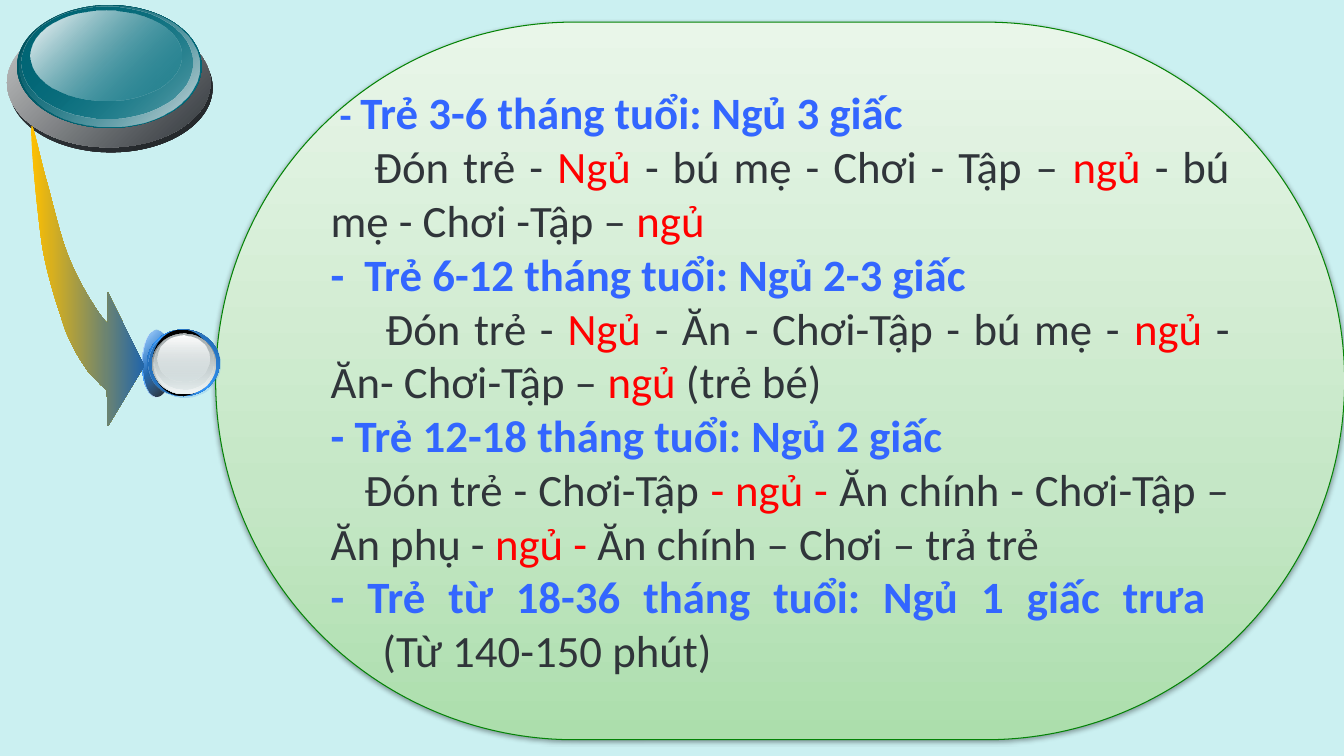
from dataclasses import dataclass, field
from typing import NamedTuple

import lxml.etree
import pptx
import pptx.dml.color
import pptx.enum.shapes
import pptx.enum.text
import pptx.oxml.ns
import pptx.util

Pt = pptx.util.Pt
MSO_SHAPE = pptx.enum.shapes.MSO_SHAPE
qn = pptx.oxml.ns.qn


@dataclass(frozen=True)
class Theme:
    background: str = "CBF0F1"
    border: str = "048306"
    heading: str = "3366FF"
    sleep: str = "FF0000"
    body: str = "30353A"
    font: str = "Calibri"
    size: float = 32
    small: float = 28
    leading: float = 38.4


class Stop(NamedTuple):
    pos: float
    color: str
    opacity: float = 100


class Box(NamedTuple):
    x: float
    y: float
    w: float
    h: float


class Disc(NamedTuple):
    box: Box
    angle: float
    stops: list[Stop]


class Run(NamedTuple):
    text: str
    color: str
    bold: bool = False
    size: float = 32


@dataclass(frozen=True)
class Para:
    runs: list[Run]
    indent: float = 0
    margin: float = 0


@dataclass
class Outline:
    points: list[tuple[float, float]] = field(default_factory=list)

    def line(self, *points: tuple[float, float]) -> None:
        self.points.extend(points)

    def curve(self, b: tuple, c: tuple, d: tuple, steps: int = 12) -> None:
        a = self.points[-1]
        for i in range(1, steps + 1):
            t = i / steps
            u = 1 - t
            weights = (u**3, 3 * u * u * t, 3 * u * t * t, t**3)
            self.points.append(tuple(
                sum(k * q[axis] for k, q in zip(weights, (a, b, c, d))) for axis in (0, 1)))


TH = Theme()

BUTTON = [
    Disc(Box(6.5, 16.6, 145.4, 92.2), 45, [Stop(0, "30353A"), Stop(100, "23272A")]),
    Disc(Box(5, 13, 145.4, 92.2), 45, [Stop(0, "C7C8C8"), Stop(100, "30353A")]),
    Disc(Box(12.2, 3.6, 131.8, 87.8), 45, [Stop(0, "01515D"), Stop(100, "027182")]),
    Disc(Box(13.7, 4.3, 128.9, 85.7), 45, [Stop(0, "027182", 0), Stop(100, "D4DBDE")]),
    Disc(Box(15.1, 5, 122.4, 79.9), 45, [Stop(0, "026675"), Stop(100, "027182", 48)]),
    Disc(Box(21.6, 7.2, 108, 64.8), 45, [Stop(0, "FFFFFF"), Stop(100, "027182", 38)]),
]
KNOB = [
    Disc(Box(101.5, 236.2, 20.2, 47.5), 45,
         [Stop(0, "FFFFFF"), Stop(50, "3399FF"), Stop(100, "FFFFFF")]),
    Disc(Box(101.5, 235.4, 20.2, 47.5), 45, [Stop(0, "3399FF", 32), Stop(100, "000000", 90)]),
    Disc(Box(105.1, 235.4, 51.8, 47.5), 315,
         [Stop(0, "1C538A"), Stop(50, "3399FF"), Stop(100, "1C538A")]),
    Disc(Box(105.8, 236.2, 51.8, 47.5), 45, [Stop(0, "2061A2"), Stop(100, "3399FF", 0)]),
    Disc(Box(108.7, 235.4, 42.5, 47.5), 0, [Stop(0, "000000"), Stop(100, "000000")]),
    Disc(Box(108.7, 238.3, 45.4, 43.2), 90, [Stop(0, "636869"), Stop(100, "D6E1E2")]),
    Disc(Box(109.4, 238.3, 44.6, 42.5), 90, [Stop(0, "D6E1E2", 0), Stop(100, "F1F5F5")]),
    Disc(Box(110.2, 238.3, 42.5, 39.6), 90, [Stop(0, "AAB2B3"), Stop(100, "D6E1E2", 48)]),
    Disc(Box(112.3, 239.8, 37.4, 32.4), 90, [Stop(0, "FFFFFF"), Stop(100, "D6E1E2", 38)]),
]
PILL = Disc(Box(154.1, 15.8, 806.4, 512.6), 270,
            [Stop(0, "ACDEAC"), Stop(35, "C5E7C6"), Stop(100, "E9F6E9")])


def head(text: str) -> Run:
    return Run(text, TH.heading, True)


def body(text: str) -> Run:
    return Run(text, TH.body)


def sleep(text: str) -> Run:
    return Run(text, TH.sleep)


SCHEDULE = [
    Para([Run("- ", TH.heading, True, TH.small), head("Trẻ 3-6 tháng tuổi: Ngủ 3 giấc")], 6.3),
    Para([body("Đón trẻ - "), sleep("Ngủ"), body(" - bú mẹ - Chơi - Tập – "), sleep("ngủ"),
          body(" - bú mẹ - Chơi -Tập – "), sleep("ngủ")], 31),
    Para([head("-\tTrẻ 6-12 tháng tuổi: Ngủ 2-3 giấc")], -24, 24),
    Para([body("Đón trẻ - "), sleep("Ngủ "), body("- Ăn - Chơi-Tập - bú mẹ - "), sleep("ngủ "),
          body("- Ăn- Chơi-Tập – "), sleep("ngủ "), body("(trẻ bé)")], 39),
    Para([head("- Trẻ 12-18 tháng tuổi: Ngủ 2 giấc")]),
    Para([body("Đón trẻ - Chơi-Tập "), sleep("- ngủ - "), body("Ăn chính - Chơi-Tập – Ăn phụ - "),
          sleep("ngủ - "), body("Ăn chính – Chơi – trả trẻ")], 24),
    Para([head("- Trẻ từ 18-36 tháng tuổi: Ngủ 1 giấc trưa "), body("\n"),
          body("(Từ 140-150 phút)")], -37, 37),
]


def rgb(color: str) -> pptx.dml.color.RGBColor:
    return pptx.dml.color.RGBColor.from_string(color)


def apply(target: object, values: dict) -> None:
    for name, value in values.items():
        setattr(target, name, value)


def add_color(parent, color: str, opacity: float) -> None:
    clr = lxml.etree.SubElement(parent, qn("a:srgbClr"), val=color)
    if opacity < 100:
        lxml.etree.SubElement(clr, qn("a:alpha"), val=str(round(opacity * 1000)))


def paint(sp, stops: list[Stop], angle: float) -> None:
    sp.shadow.inherit = False
    sp.line.fill.background()
    grad = lxml.etree.Element(qn("a:gradFill"), rotWithShape="1")
    gs_lst = lxml.etree.SubElement(grad, qn("a:gsLst"))
    for stop in stops:
        gs = lxml.etree.SubElement(gs_lst, qn("a:gs"), pos=str(round(stop.pos * 1000)))
        add_color(gs, stop.color, stop.opacity)
    lxml.etree.SubElement(grad, qn("a:lin"), ang=str(round(angle * 60000)), scaled="0")
    sp.element.spPr.insert(2, grad)


def add_disc(s, disc: Disc, kind=MSO_SHAPE.OVAL):
    sp = s.shapes.add_shape(kind, *(Pt(v) for v in disc.box))
    paint(sp, disc.stops, disc.angle)
    return sp


def add_para(p, para: Para) -> None:
    apply(p, {"alignment": pptx.enum.text.PP_ALIGN.JUSTIFY, "line_spacing": Pt(TH.leading)})
    p_pr = p._p.get_or_add_pPr()
    p_pr.set("marL", str(Pt(para.margin)))
    p_pr.set("indent", str(Pt(para.indent)))
    for run in para.runs:
        if run.text == "\n":
            p.add_line_break()
            continue
        r = p.add_run()
        apply(r, {"text": run.text})
        apply(r.font, {"name": TH.font, "size": Pt(run.size), "bold": run.bold})
        r.font.color.rgb = rgb(run.color)


def add_schedule(s) -> None:
    sp = add_disc(s, PILL, MSO_SHAPE.ROUNDED_RECTANGLE)
    sp.adjustments[0] = 0.5
    sp.line.color.rgb = rgb(TH.border)
    sp.line.width = Pt(0.75)
    shadow = lxml.etree.SubElement(
        sp.element.spPr.find(qn("a:effectLst")), qn("a:outerShdw"),
        blurRad=str(Pt(3.1)), dist=str(Pt(1.6)), dir="5400000", rotWithShape="0")
    add_color(shadow, "000000", 38)
    tf = sp.text_frame
    apply(tf, {"word_wrap": True, "vertical_anchor": pptx.enum.text.MSO_ANCHOR.MIDDLE,
               "margin_left": Pt(7.2), "margin_right": Pt(7.2),
               "margin_top": Pt(3.6), "margin_bottom": Pt(3.6)})
    for i, para in enumerate(SCHEDULE):
        add_para(tf.add_paragraph() if i else tf.paragraphs[0], para)


def add_arrow(s) -> None:
    arrow = Outline([(22.3, 92.2)])
    arrow.curve((21.6, 99.4), (26.6, 152.6), (30.2, 176.4))
    arrow.curve((34.6, 200.9), (41.8, 221), (46.8, 236.2))
    arrow.curve((52.6, 250.6), (58.3, 258.5), (62.6, 265))
    arrow.line((72, 275), (76.3, 278.6), (77, 304.6), (103, 261.4), (77, 208.8), (77, 231.1))
    arrow.curve((72.7, 228.2), (59, 206.6), (51.8, 190.1))
    arrow.curve((43.9, 173.5), (38.2, 146.9), (33.8, 131))
    arrow.curve((28.8, 114.5), (22.3, 80.6), (22.3, 92.2))
    start, *rest = [(Pt(x), Pt(y)) for x, y in arrow.points]
    builder = s.shapes.build_freeform(*start)
    builder.add_line_segments(rest, close=True)
    paint(builder.convert_to_shape(), [Stop(0, "FFC000"), Stop(100, "2165AA")], 0)


def main() -> None:
    prs = pptx.Presentation()
    apply(prs, {"slide_width": Pt(960), "slide_height": Pt(540)})
    s = prs.slides.add_slide(prs.slide_layouts[6])
    s.background.fill.solid()
    s.background.fill.fore_color.rgb = rgb(TH.background)
    for disc in BUTTON:
        add_disc(s, disc)
    add_schedule(s)
    for disc in KNOB:
        add_disc(s, disc)
    add_arrow(s)
    prs.save("out.pptx")


if __name__ == "__main__":
    main()
